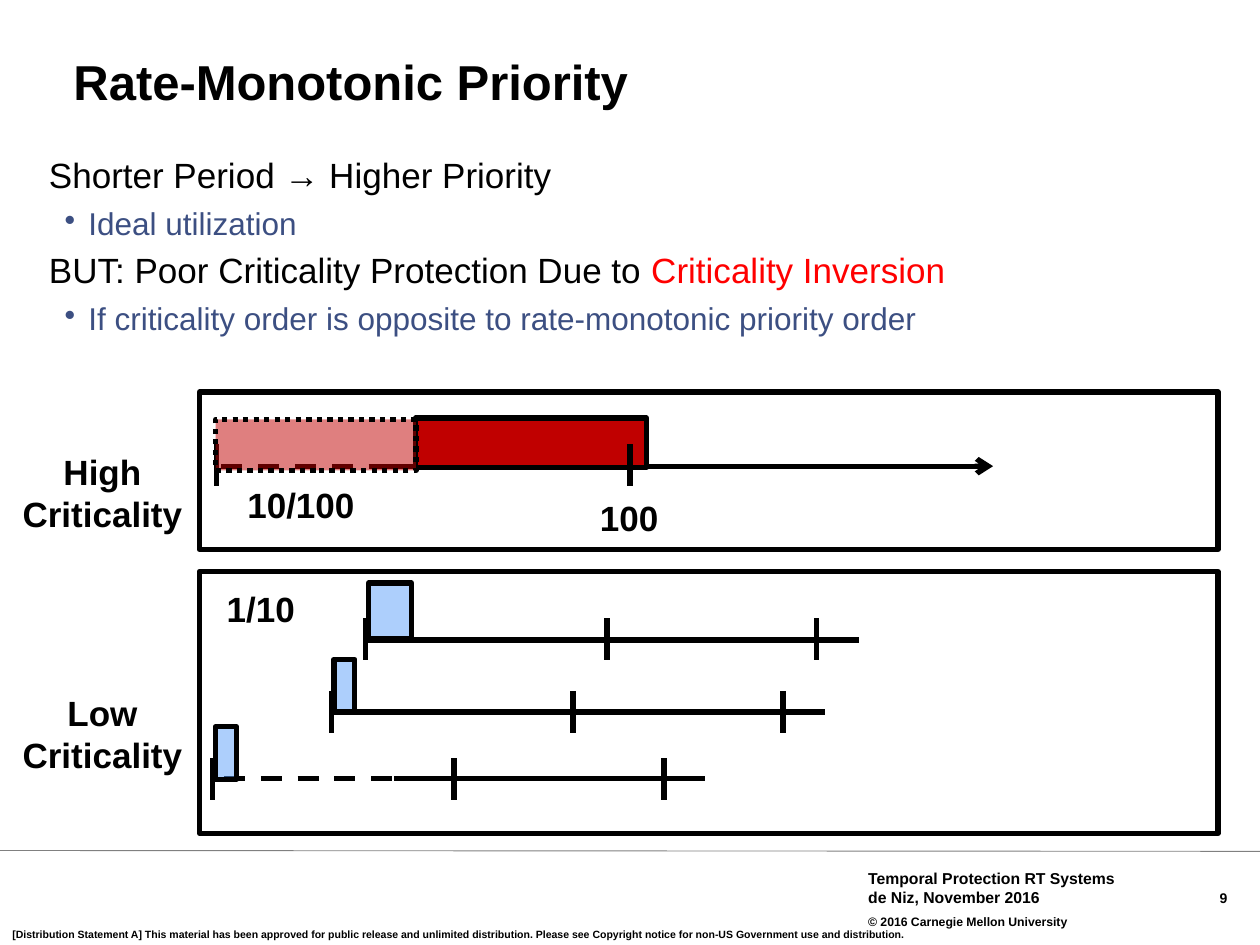
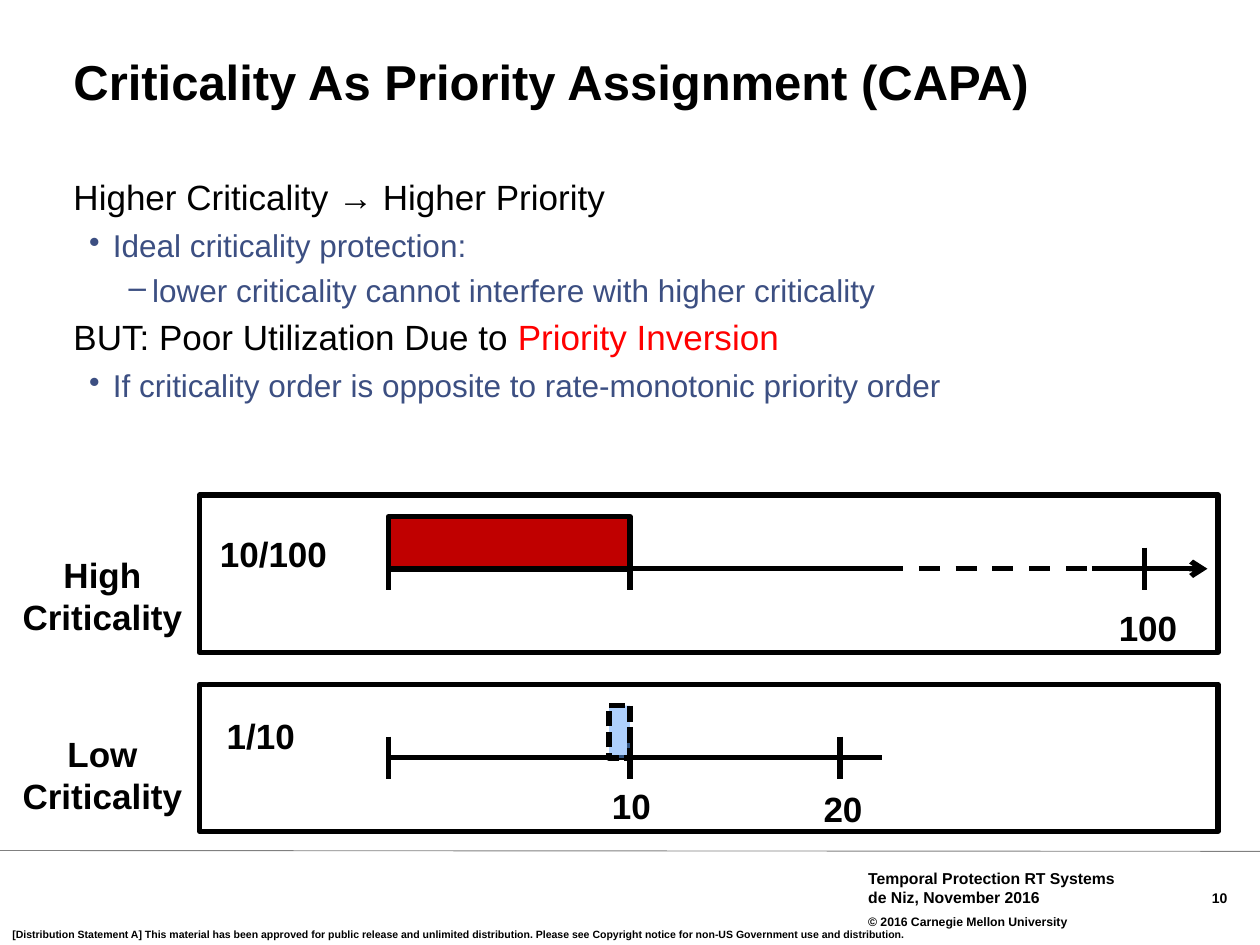
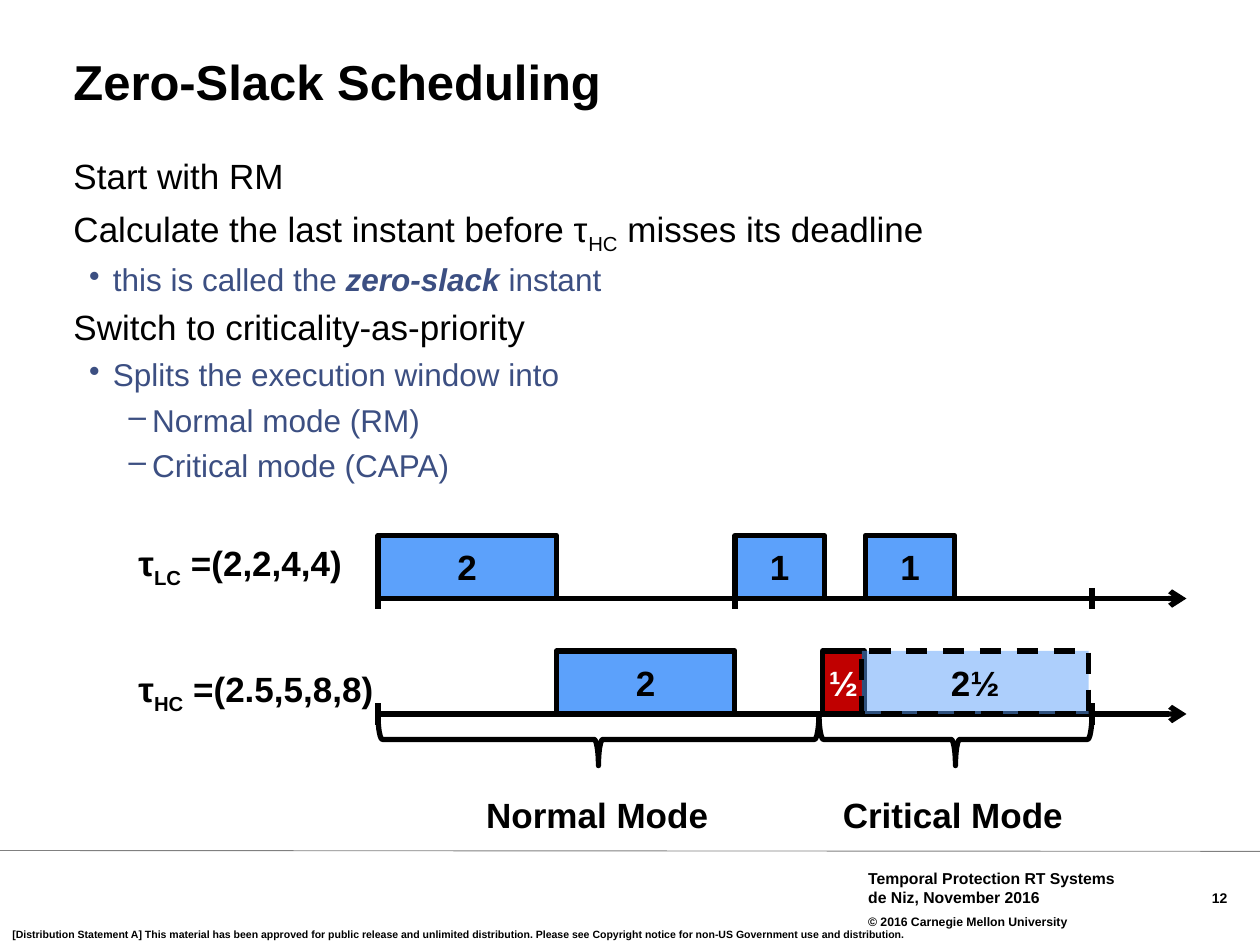
"""Build three slides on rate-monotonic, criticality-based and zero-slack scheduling."""
from lxml import etree
from pptx import Presentation
from pptx.dml.color import RGBColor
from pptx.enum import dml, shapes, text
from pptx.oxml import ns
from pptx.util import Pt

BLACK = RGBColor(0x00, 0x00, 0x00)
WHITE = RGBColor(0xFF, 0xFF, 0xFF)
GREY = RGBColor(0x80, 0x80, 0x80)
NAVY = RGBColor(0x3C, 0x4F, 0x82)
ALERT = RGBColor(0xFF, 0x00, 0x00)
HIGH = RGBColor(0xC0, 0x00, 0x00)
LOW = RGBColor(0x5C, 0xA1, 0xFB)
FONT = "Arial"

DASH = dml.MSO_LINE.DASH
DOTS = dml.MSO_LINE.ROUND_DOT
SHORT_DASH = dml.MSO_LINE.SQUARE_DOT
LEFT, CENTER, RIGHT = text.PP_ALIGN.LEFT, text.PP_ALIGN.CENTER, text.PP_ALIGN.RIGHT

LEVELS = [(20, BLACK, 0, None), (18, NAVY, 22.5, "•"), (18, NAVY, 45, "–")]
HANGING = 13.5
LABEL_INSETS = (7.2, 3.6, 7.2, 3.6)
FRAME_LEFT, FRAME_WIDTH = 114, 582
LOW_TICKS, LOW_LENGTH = (0, 138, 258), 282

FOOTER = [("Temporal Protection RT Systems", 9, 1), ("de Niz, November 2016", 9, 1),
          ("© 2016 Carnegie Mellon University", 7, 1.5)]
DISTRIBUTION = ("[Distribution Statement A] This material has been approved for public release and "
                "unlimited distribution. Please see Copyright notice for non-US Government use "
                "and distribution.")


def low_ticks(start, axis):
    return [(start + offset, axis, 12) for offset in LOW_TICKS]


def low_axis(start, axis):
    return (start, start + LOW_LENGTH, axis, None, False)


# axes: left, right, y, dash, arrow; ticks: x, y, half height
# bars: left, bottom, width, height, colour, alpha, dash, label
# frames: top, height; labels: left, top, width, runs, alignment
SLIDES = [
    dict(
        title="Rate-Monotonic Priority", number="9", body_at=(28, 89.5, 662, 146),
        body=[(0, ["Shorter Period → Higher Priority"]),
              (1, ["Ideal utilization"]),
              (0, ["BUT: Poor Criticality Protection Due to ", ("Criticality Inversion", "alert")]),
              (1, ["If criticality order is opposite to rate-monotonic priority order"])],
        axes=[(222, 504, 266.4, None, False), (126.5, 246, 266.4, DASH, False),
              (501, 567.5, 266.4, None, True), low_axis(208.8, 365.8), low_axis(189.4, 406.8),
              (225.4, 403, 445, None, False), (128, 247.7, 445, DASH, False)],
        ticks=[(123.8, 266, 12), *low_ticks(208.8, 365.4), *low_ticks(189.4, 407),
               *low_ticks(121.4, 445.3)],
        bars=[(237.6, 267.1, 131.8, 28.2, HIGH, 100, None, ""),
              (123.2, 268.9, 114.5, 29.2, HIGH, 50, DOTS, ""),
              (210.7, 365.2, 24.5, 32, LOW, 50, None, ""),
              (190.8, 406.8, 12, 30, LOW, 50, None, ""),
              (123.1, 445.3, 12, 30, LOW, 50, None, "")],
        front_ticks=[(360, 266, 12)],
        frames=[(224, 90), (326.6, 149.6)],
        labels=[(335.5, 280, 48, ["100"], CENTER), (133.7, 272.7, 76.5, ["10/100"], CENTER),
                (122, 332, 54, ["1/10"], CENTER),
                (5.3, 254, 106.5, ["High\nCriticality"], CENTER),
                (5.3, 391.5, 106.5, ["Low\nCriticality"], CENTER)],
    ),
    dict(
        title="Criticality As Priority Assignment (CAPA)", number="10",
        body_at=(42, 102, 642, 378),
        body=[(0, ["Higher Criticality → Higher Priority"]),
              (1, ["Ideal criticality protection:"]),
              (2, ["lower criticality cannot interfere with higher criticality"]),
              (0, ["BUT: Poor Utilization Due to ", ("Priority Inversion", "alert")]),
              (1, ["If criticality order is opposite to rate-monotonic priority order"])],
        axes=[(222, 504, 325, None, False), (504, 624, 325, DASH, False),
              (624, 690, 325, None, True), low_axis(222, 433)],
        ticks=[(222, 325, 12), (654, 325, 12), *low_ticks(222, 433)],
        bars=[(222, 325.2, 138, 30, HIGH, 100, None, ""),
              (348, 433.2, 12, 30, LOW, 50, SHORT_DASH, "")],
        front_ticks=[(360, 325, 12)],
        frames=[(282.8, 90), (391, 84)],
        labels=[(632, 343, 48, ["100"], CENTER), (342.5, 445, 36.5, ["10"], CENTER),
                (463.5, 446.2, 36.5, ["20"], CENTER), (118, 301, 76.5, ["10/100"], CENTER),
                (122, 404.6, 54, ["1/10"], CENTER),
                (5.3, 313, 106.5, ["High\nCriticality"], CENTER),
                (5.3, 415, 106.5, ["Low\nCriticality"], CENTER)],
    ),
    dict(
        title="Zero-Slack Scheduling", number="12", body_at=(42, 90, 642, 144),
        body=[(0, ["Start with RM"]),
              (0, ["Calculate the last instant before τ", ("HC", "sub"), " misses its deadline"]),
              (1, ["this is called the ", ("zero-slack", "strong"), " instant"]),
              (0, ["Switch to criticality-as-priority"]),
              (1, ["Splits the execution window into"]),
              (2, ["Normal mode (RM)"]),
              (2, ["Critical mode (CAPA)"])],
        axes=[(216, 678, 342, None, True), (216, 678, 408, None, True)],
        ticks=[(216, 342, 6), (420, 342, 6), (624, 342, 6), (216, 408, 6), (624, 408, 6)],
        bars=[(216, 342, 102, 36, LOW, 100, None, "2"), (420, 342, 51, 36, LOW, 100, None, "1"),
              (318, 408, 102, 36, LOW, 100, None, "2"), (470, 408, 24, 36, HIGH, 100, None, "½"),
              (492.5, 408, 129.6, 36, LOW, 50, DASH, "2½"),
              (494.6, 342, 51, 36, LOW, 100, None, "1")],
        front_ticks=[], frames=[],
        braces=[(216, 468), (468, 624)],
        labels=[(72, 306, 134, ["τ", ("LC", "sub"), " =(2,2,4,4)"], LEFT),
                (72, 378, 152, ["τ", ("HC", "sub"), " =(2.5,5,8,8)"], LEFT),
                (270, 450, 142.5, ["Normal Mode"], CENTER),
                (474, 450, 141, ["Critical Mode"], CENTER)],
    ),
]


def add_runs(paragraph, runs, size, color=BLACK, bold=False):
    for item in runs:
        words, kind = (item, None) if isinstance(item, str) else item
        for index, line in enumerate(words.split("\n")):
            if index:
                paragraph.add_line_break()
            run = paragraph.add_run()
            run.text = line
            font = run.font
            font.name, font.size = FONT, Pt(size)
            font.bold = bold or kind == "strong"
            font.italic = kind == "strong"
            font.color.rgb = ALERT if kind == "alert" else color
            if kind == "sub":
                run._r.get_or_add_rPr().set("baseline", "-25000")


def set_frame(frame, insets=(0, 0, 0, 0), wrap=True, anchor=text.MSO_ANCHOR.TOP):
    frame.margin_left, frame.margin_top, frame.margin_right, frame.margin_bottom = map(Pt, insets)
    frame.word_wrap, frame.vertical_anchor = wrap, anchor
    return frame


def add_box(slide, at, **settings):
    return set_frame(slide.shapes.add_textbox(*map(Pt, at)).text_frame, **settings)


def add_text(slide, at, runs, size, align=LEFT, spacing=None, **settings):
    paragraph = add_box(slide, at, **settings).paragraphs[0]
    paragraph.alignment, paragraph.line_spacing = align, spacing
    add_runs(paragraph, runs, size, bold=True)


def style_line(line, dash=None, arrow=False, color=BLACK, width=3):
    line.color.rgb, line.width = color, Pt(width)
    if dash:
        line.dash_style = dash
    ln = line._get_or_add_ln()
    etree.SubElement(ln, ns.qn("a:round"))
    if arrow:
        etree.SubElement(ln, ns.qn("a:tailEnd"), type="arrow")


def add_line(slide, start, end, **style):
    connector = slide.shapes.add_connector(shapes.MSO_CONNECTOR.STRAIGHT, *map(Pt, start + end))
    etree.SubElement(connector._element.spPr, ns.qn("a:effectLst"))
    style_line(connector.line, **style)


def add_outline(slide, preset, at, fill=None, alpha=100, dash=None):
    outline = slide.shapes.add_shape(preset, *map(Pt, at))
    outline.shadow.inherit = False
    if fill is None:
        outline.fill.background()
    else:
        outline.fill.solid()
        outline.fill.fore_color.rgb = fill
        if alpha < 100:
            color = outline._element.spPr.find(ns.qn("a:solidFill"))[0]
            etree.SubElement(color, ns.qn("a:alpha"), val=str(alpha * 1000))
    style_line(outline.line, dash)
    return outline


def add_bar(slide, left, bottom, width, height, color, alpha, dash, label):
    bar = add_outline(slide, shapes.MSO_SHAPE.RECTANGLE, (left, bottom - height, width, height),
                      color, alpha, dash)
    if label:
        frame = set_frame(bar.text_frame, wrap=False, anchor=text.MSO_ANCHOR.MIDDLE)
        frame.paragraphs[0].alignment = CENTER
        add_runs(frame.paragraphs[0], [label], 20, WHITE if color == HIGH else BLACK, True)


def add_ticks(slide, ticks):
    for x, y, half in ticks:
        add_line(slide, (x, y - half), (x, y + half))


def add_brace(slide, left, right, top=407.5, depth=30):
    span = right - left
    at = ((left + right - depth) / 2, top + (depth - span) / 2, depth, span)
    add_outline(slide, shapes.MSO_SHAPE.LEFT_BRACE, at).rotation = 270


def add_body(slide, at, paragraphs):
    frame = add_box(slide, at)
    for index, (level, runs) in enumerate(paragraphs):
        paragraph = frame.add_paragraph() if index else frame.paragraphs[0]
        size, color, indent, bullet = LEVELS[level]
        paragraph.line_spacing, paragraph.space_after = 0.95, Pt(size * 0.29)
        if bullet:
            properties = paragraph._p.get_or_add_pPr()
            properties.set("marL", str(Pt(indent)))
            properties.set("indent", str(-Pt(HANGING)))
            etree.SubElement(properties, ns.qn("a:buChar"), char=bullet)
        add_runs(paragraph, runs, size, color)


def add_common(slide, title, number):
    add_text(slide, (642, 504.7, 66.5, 29.5), [number], 8, RIGHT, Pt(13), insets=(0, 0, 7.2, 3.6))
    add_line(slide, (0, 486), (720, 486.5), color=GREY, width=0.5)
    footer = add_box(slide, (492.5, 492.5, 185.8, 41.8), insets=(3.6,) * 4,
                     anchor=text.MSO_ANCHOR.MIDDLE)
    for index, (words, size, spacing) in enumerate(FOOTER):
        paragraph = footer.add_paragraph() if index else footer.paragraphs[0]
        paragraph.line_spacing = spacing
        add_runs(paragraph, [words], size, bold=True)
    add_text(slide, (0, 527, 546, 14.4), [DISTRIBUTION], 6, insets=LABEL_INSETS)
    add_text(slide, (42, 33, 642, 30), [title], 28, spacing=0.9)


def build_slide(slide, content):
    add_common(slide, content["title"], content["number"])
    add_body(slide, content["body_at"], content["body"])
    for left, right, y, dash, arrow in content["axes"]:
        add_line(slide, (left, y), (right, y), dash=dash, arrow=arrow)
    add_ticks(slide, content["ticks"])
    for bar in content["bars"]:
        add_bar(slide, *bar)
    add_ticks(slide, content["front_ticks"])
    for top, height in content["frames"]:
        add_outline(slide, shapes.MSO_SHAPE.RECTANGLE, (FRAME_LEFT, top, FRAME_WIDTH, height))
    for left, right in content.get("braces", []):
        add_brace(slide, left, right)
    for left, top, width, runs, align in content["labels"]:
        height = 55.5 if "\n" in runs[0] else 31.5
        add_text(slide, (left, top, width, height), runs, 20, align,
                 insets=LABEL_INSETS, wrap=False)


def main():
    deck = Presentation()
    deck.slide_width, deck.slide_height = Pt(720), Pt(540)
    for content in SLIDES:
        build_slide(deck.slides.add_slide(deck.slide_layouts[6]), content)
    deck.save("out.pptx")


if __name__ == "__main__":
    main()
